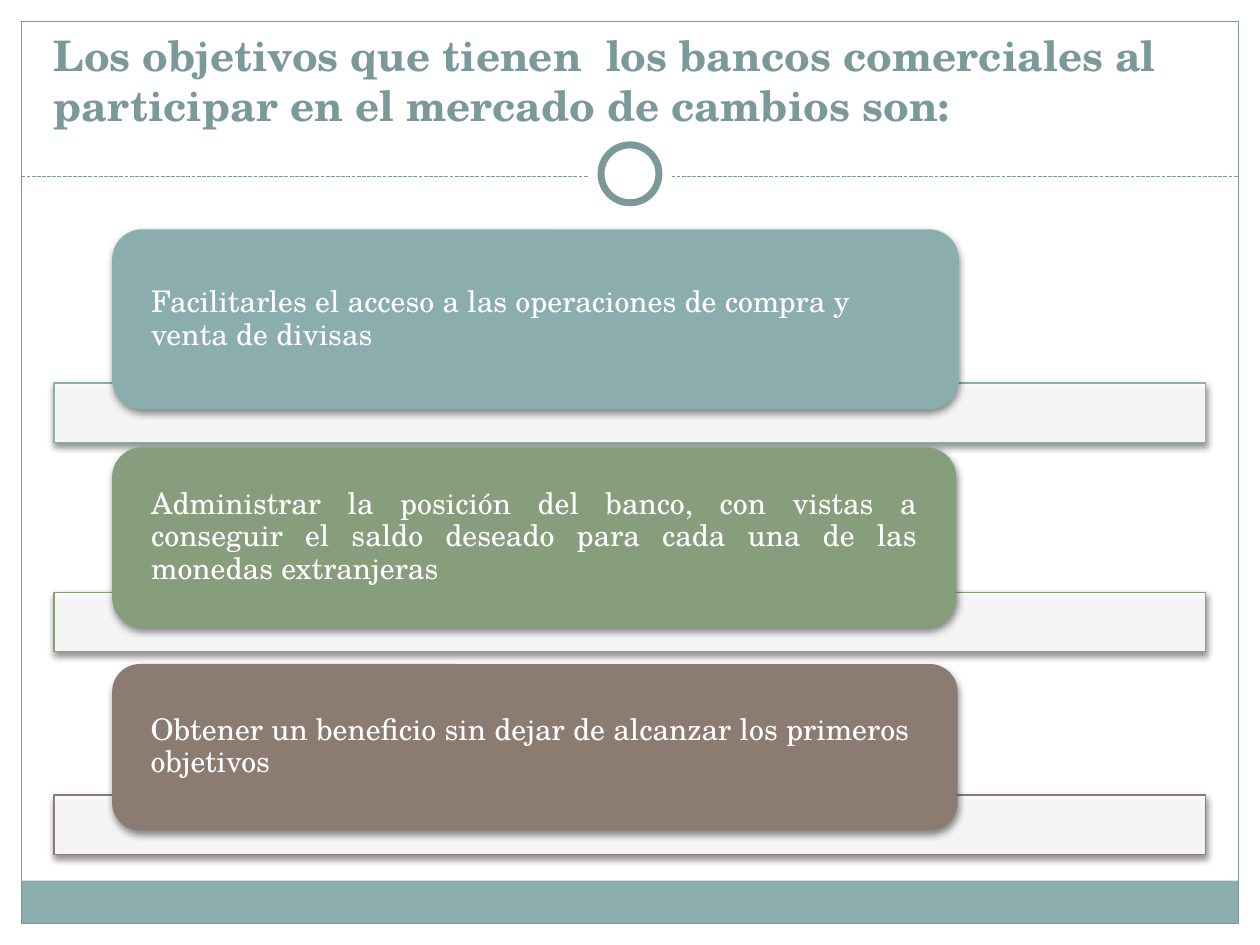
import pptx
import pptx.dml.color
import pptx.enum.dml
import pptx.enum.shapes
import pptx.enum.text
import pptx.oxml
import pptx.oxml.ns
import pptx.util

TITLE = ("Los objetivos que tienen  los bancos comerciales al participar "
         "en el mercado de cambios son:")
# text, colour, alignment, card (top, width, height), top of the bar
OBJECTIVES = [
    ("Facilitarles el acceso a las operaciones de compra y venta de divisas",
     "teal", "LEFT", (18.2, 67.2, 14.3), 30.4),
    ("Administrar la posición del banco, con vistas a conseguir el saldo "
     "deseado para cada una de las monedas extranjeras",
     "green", "JUSTIFY", (35.5, 67, 14.3), 47),
    ("Obtener un beneficio sin dejar de alcanzar los primeros objetivos",
     "brown", "LEFT", (52.7, 67.1, 13.2), 63.1),
]
COLORS = {"white": "FFFFFF", "frame": "7C999A", "teal": "8CADAE",
          "green": "879E7D", "brown": "8C7B70"}
FONT = "TeX Gyre Schola"

# The slide is a grid of 100 columns by 75 rows of square cells.
COLUMNS, ROWS = 100, 75
MARGIN = 1.7
FRAME_WIDTH = COLUMNS - 2 * MARGIN
FOOTER_TOP = 69.9
RULE_ROW, RING_ROW = 14, 13.8
BAR_LEFT, BAR_HEIGHT = 4.3, 4.7
CARD_LEFT = 8.9
Kind = pptx.enum.shapes.MSO_SHAPE


def cells(count):
    return pptx.util.Inches(count / 10)


def color(name):
    return pptx.dml.color.RGBColor.from_string(COLORS[name])


def add_effects(shape, content=""):
    shape._element.spPr.append(pptx.oxml.parse_xml(
        f'<a:effectLst {pptx.oxml.ns.nsdecls("a")}>{content}</a:effectLst>'))


def add_drop_shadow(shape):
    effects = shape._element.spPr.find(pptx.oxml.ns.qn("a:effectLst"))
    effects.append(pptx.oxml.parse_xml(
        f'<a:outerShdw {pptx.oxml.ns.nsdecls("a")} blurRad="50800" '
        'dist="25400" dir="5400000" rotWithShape="0">'
        '<a:srgbClr val="000000"><a:alpha val="45000"/></a:srgbClr>'
        '</a:outerShdw>'))


def set_opacity(shape, percent):
    tint = shape._element.spPr.find(
        f'{pptx.oxml.ns.qn("a:solidFill")}/{pptx.oxml.ns.qn("a:srgbClr")}')
    tint.append(pptx.oxml.parse_xml(
        f'<a:alpha {pptx.oxml.ns.nsdecls("a")} val="{percent * 1000}"/>'))


def add_block(page, kind, place, fill=None, line=None, weight=0.75):
    block = page.shapes.add_shape(kind, *map(cells, place))
    block.shadow.inherit = False
    if fill:
        block.fill.solid()
        block.fill.fore_color.rgb = color(fill)
    else:
        block.fill.background()
    if line:
        block.line.color.rgb = color(line)
        block.line.width = pptx.util.Pt(weight)
    else:
        block.line.fill.background()
    return block


def add_ring(page, size, **style):
    place = (COLUMNS / 2 - size / 2, RING_ROW - size / 2, size, size)
    add_block(page, Kind.OVAL, place, **style)


def write(shape, text, size, name, bold=False):
    shape.text_frame.word_wrap = True
    shape.text_frame.text = text
    para = shape.text_frame.paragraphs[0]
    span = para.runs[0]
    span.font.name = FONT
    span.font.size = pptx.util.Pt(size)
    span.font.bold = bold
    span.font.color.rgb = color(name)
    return para


def add_frame(page):
    add_block(page, Kind.RECTANGLE,
              (MARGIN, FOOTER_TOP, FRAME_WIDTH, ROWS - MARGIN - FOOTER_TOP),
              fill="teal")
    add_block(page, Kind.RECTANGLE,
              (MARGIN, MARGIN, FRAME_WIDTH, ROWS - 2 * MARGIN), line="frame")
    rule = page.shapes.add_connector(
        pptx.enum.shapes.MSO_CONNECTOR.STRAIGHT, cells(MARGIN),
        cells(RULE_ROW), cells(COLUMNS - MARGIN), cells(RULE_ROW))
    rule.line.color.rgb = color("frame")
    rule.line.width = pptx.util.Pt(0.75)
    rule.line.dash_style = pptx.enum.dml.MSO_LINE.SQUARE_DOT
    add_effects(rule)
    add_ring(page, 6.7, fill="white")
    add_ring(page, 4.6, fill="white", line="frame", weight=4)


def add_title(page):
    box = page.shapes.add_textbox(*map(cells, (3.3, 2.5, 93.3, 8.3)))
    box.text_frame.vertical_anchor = pptx.enum.text.MSO_ANCHOR.BOTTOM
    write(box, TITLE, 24, "frame", bold=True)


def add_objective(page, text, name, alignment, card_place, bar_top):
    bar = add_block(page, Kind.RECTANGLE,
                    (BAR_LEFT, bar_top, COLUMNS - 2 * BAR_LEFT, BAR_HEIGHT),
                    fill="white", line=name)
    set_opacity(bar, 90)
    add_drop_shadow(bar)

    top, width, height = card_place
    card = add_block(page, Kind.ROUNDED_RECTANGLE,
                     (CARD_LEFT, top, width, height), fill=name)
    add_drop_shadow(card)
    frame = card.text_frame
    frame.margin_left = frame.margin_right = cells(2.4)
    frame.margin_top = frame.margin_bottom = 0
    frame.vertical_anchor = pptx.enum.text.MSO_ANCHOR.MIDDLE
    para = write(card, text, 17, "white")
    para.alignment = pptx.enum.text.PP_ALIGN[alignment]
    para.line_spacing = 0.9


def main():
    deck = pptx.Presentation()
    deck.slide_width, deck.slide_height = cells(COLUMNS), cells(ROWS)
    page = deck.slides.add_slide(deck.slide_layouts[6])
    add_frame(page)
    add_title(page)
    for objective in OBJECTIVES:
        add_objective(page, *objective)
    deck.save("out.pptx")


if __name__ == "__main__":
    main()
